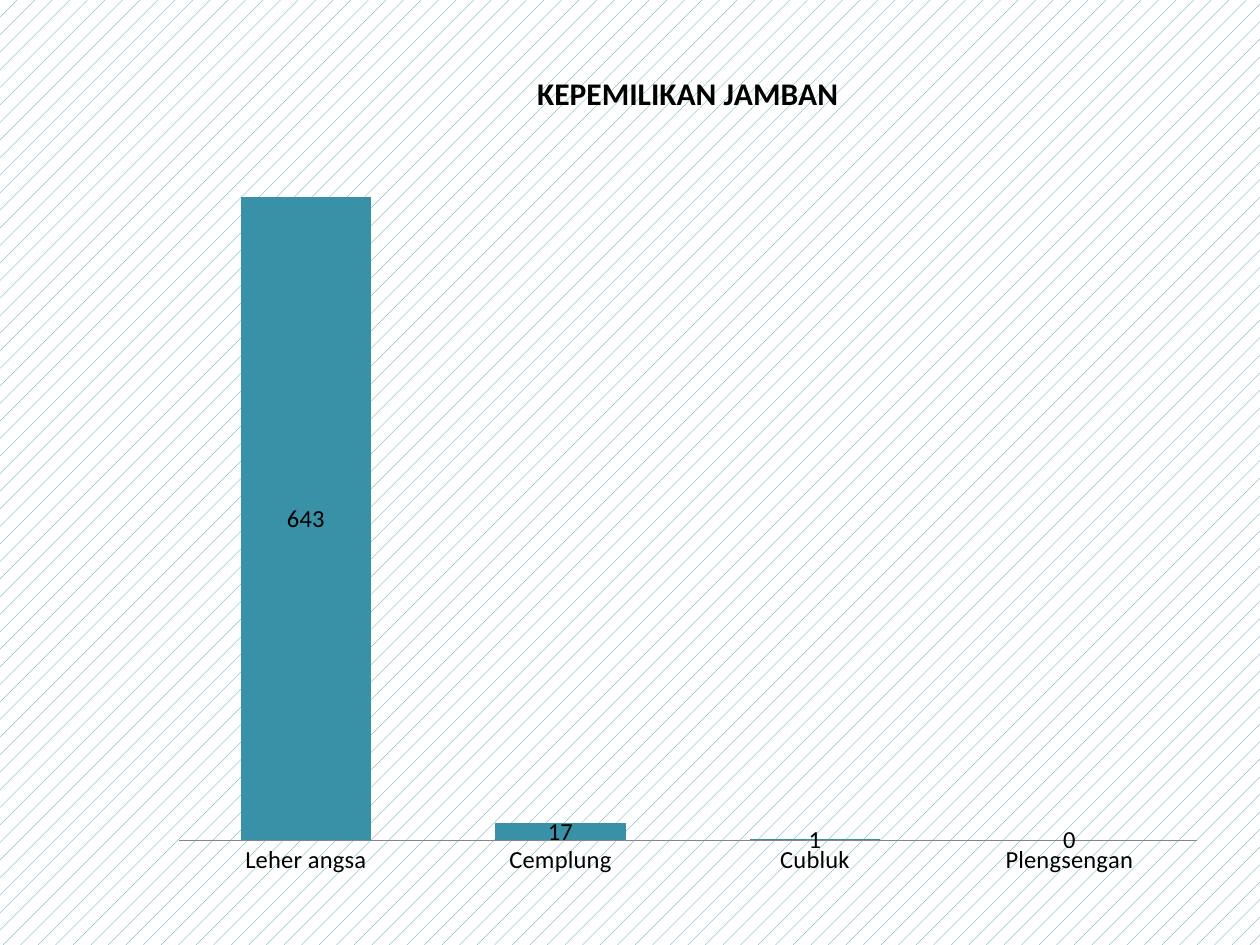
from pptx import Presentation
from pptx.chart.data import CategoryChartData
from pptx.dml.color import RGBColor
from pptx.enum import chart as ch, dml
from pptx.util import Pt

TITLE = "KEPEMILIKAN JAMBAN"
LATRINES = {"Leher angsa": 643, "Cemplung": 17, "Cubluk": 1, "Plengsengan": 0}
TEAL, BLACK, WHITE, GRAY = "3891A7", "000000", "FFFFFF", "868686"


def color(value):
    return RGBColor.from_string(value)


def style(font, size, bold=False):
    font.name = "Calibri"
    font.size = Pt(size)
    font.bold = bold
    font.color.rgb = color(BLACK)


deck = Presentation()
deck.slide_width, deck.slide_height = Pt(720), Pt(540)
slide = deck.slides.add_slide(deck.slide_layouts[6])

backdrop = slide.background.fill
backdrop.patterned()
backdrop.pattern = dml.MSO_PATTERN.PERCENT_5
backdrop.fore_color.rgb = color(TEAL)
backdrop.back_color.rgb = color(WHITE)

data = CategoryChartData()
data.categories = list(LATRINES)
data.add_series("Series 1", list(LATRINES.values()))
ownership = slide.shapes.add_chart(
    ch.XL_CHART_TYPE.COLUMN_STACKED, Pt(90), Pt(24), Pt(606), Pt(486), data
).chart
style(ownership.font, 10)
ownership.has_legend = False
ownership.has_title = True
heading = ownership.chart_title.text_frame
heading.text = TITLE
style(heading.paragraphs[0].runs[0].font, 18, True)

kinds = ownership.category_axis
kinds.major_tick_mark = ch.XL_TICK_MARK.NONE
kinds.format.line.color.rgb = color(GRAY)
kinds.format.line.width = Pt(0.75)
style(kinds.tick_labels.font, 14)

counts = ownership.value_axis
counts.visible = False
counts.has_major_gridlines = False

columns = ownership.plots[0]
columns.gap_width = 95
columns.overlap = 100
columns.vary_by_categories = False
households = columns.series[0]
households.format.fill.solid()
households.format.fill.fore_color.rgb = color(TEAL)
households.data_labels.show_value = True
style(households.data_labels.font, 14)

deck.save("out.pptx")
